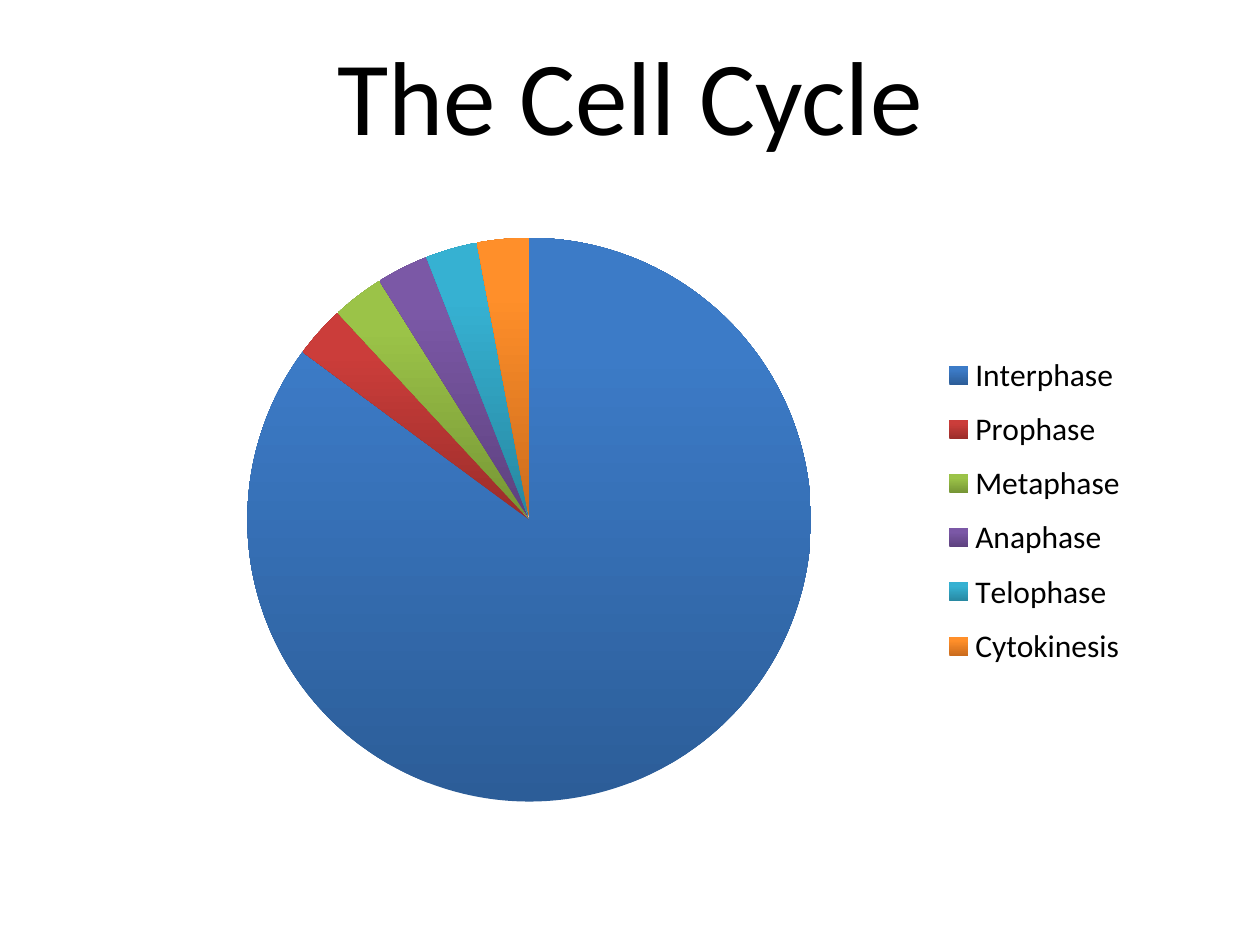
import pptx
import pptx.util
import pptx.chart.data
import pptx.dml.color
import pptx.enum.chart
import pptx.enum.text
import pptx.oxml
import pptx.oxml.ns

RGBColor = pptx.dml.color.RGBColor
BLACK = RGBColor(0x00, 0x00, 0x00)
BLUE = RGBColor(0x2C, 0x5D, 0x98), RGBColor(0x3C, 0x7B, 0xC7)
RED = RGBColor(0x9B, 0x2D, 0x2A), RGBColor(0xCB, 0x3D, 0x3A)
GREEN = RGBColor(0x76, 0x95, 0x35), RGBColor(0x9B, 0xC3, 0x48)
PURPLE = RGBColor(0x5D, 0x41, 0x7E), RGBColor(0x7B, 0x58, 0xA6)
TEAL = RGBColor(0x27, 0x87, 0xA0), RGBColor(0x36, 0xB1, 0xD2)
ORANGE = RGBColor(0xCB, 0x6C, 0x1D), RGBColor(0xFF, 0x8F, 0x2A)

PHASES = [
    ("Interphase", 86, BLUE),
    ("Prophase", 3, RED),
    ("Metaphase", 3, GREEN),
    ("Anaphase", 3, PURPLE),
    ("Telophase", 3, TEAL),
    ("Cytokinesis", 3, ORANGE),
]


class Deck:
    font_name = "Calibri"
    text_color = BLACK
    columns = 50
    rows = 30

    def __init__(self, width, height):
        self.prs = pptx.Presentation()
        self.prs.slide_width = pptx.util.Inches(width)
        self.prs.slide_height = pptx.util.Inches(height)
        self.s = self.prs.slides.add_slide(self.prs.slide_layouts[6])

    def box(self, column, row, across, down):
        w = self.prs.slide_width / self.columns
        h = self.prs.slide_height / self.rows
        return int(column * w), int(row * h), int(across * w), int(down * h)

    def style(self, font, size):
        font.name = self.font_name
        font.size = pptx.util.Pt(size)
        font.color.rgb = self.text_color

    def title(self, text, size, *cells):
        tf = self.s.shapes.add_textbox(*self.box(*cells)).text_frame
        tf.word_wrap = True
        tf.vertical_anchor = pptx.enum.text.MSO_ANCHOR.MIDDLE
        p = tf.paragraphs[0]
        p.alignment = pptx.enum.text.PP_ALIGN.CENTER
        r = p.add_run()
        r.text = text
        self.style(r.font, size)

    def pie(self, name, slices, size, *cells):
        data = pptx.chart.data.CategoryChartData()
        data.categories = [label for label, _, _ in slices]
        data.add_series(name, [value for _, value, _ in slices])
        chart = self.s.shapes.add_chart(
            pptx.enum.chart.XL_CHART_TYPE.PIE, *self.box(*cells), data
        ).chart
        self.style(chart.font, size)
        chart.has_title = False
        plot = chart.plots[0]
        plot.vary_by_categories = True
        for i, (_, _, shades) in enumerate(slices):
            self.shade(plot.series[0].points[i].format, *shades)
        return chart

    def shade(self, fmt, dark, light):
        fmt.line.fill.background()
        fmt.fill.gradient()
        fmt.fill.gradient_angle = 90
        start, end = fmt.fill.gradient_stops
        start.color.rgb, start.position = dark, 0
        end.color.rgb, end.position = light, 0.8

    def legend(self, chart, x, y, w, h):
        chart.has_legend = True
        legend = chart.legend
        legend.position = pptx.enum.chart.XL_LEGEND_POSITION.RIGHT
        legend.include_in_layout = False
        element = legend._element
        for old in element.findall(pptx.oxml.ns.qn("c:layout")):
            element.remove(old)
        values = dict(xMode="edge", yMode="edge", x=x, y=y, w=w, h=h)
        parts = "".join(f'<c:{k} val="{v}"/>' for k, v in values.items())
        layout = pptx.oxml.parse_xml(
            f'<c:layout {pptx.oxml.ns.nsdecls("c")}>'
            f"<c:manualLayout>{parts}</c:manualLayout></c:layout>"
        )
        element.find(pptx.oxml.ns.qn("c:legendPos")).addnext(layout)


def main():
    deck = Deck(10, 7.5)
    deck.title("The Cell Cycle", 60, 3, 0.04, 44, 5.84)
    chart = deck.pie("Series 1", PHASES, 18, 3, 7, 44, 19)
    deck.legend(chart, 0.78, 0.2, 0.17, 0.57)
    deck.prs.save("out.pptx")


if __name__ == "__main__":
    main()
